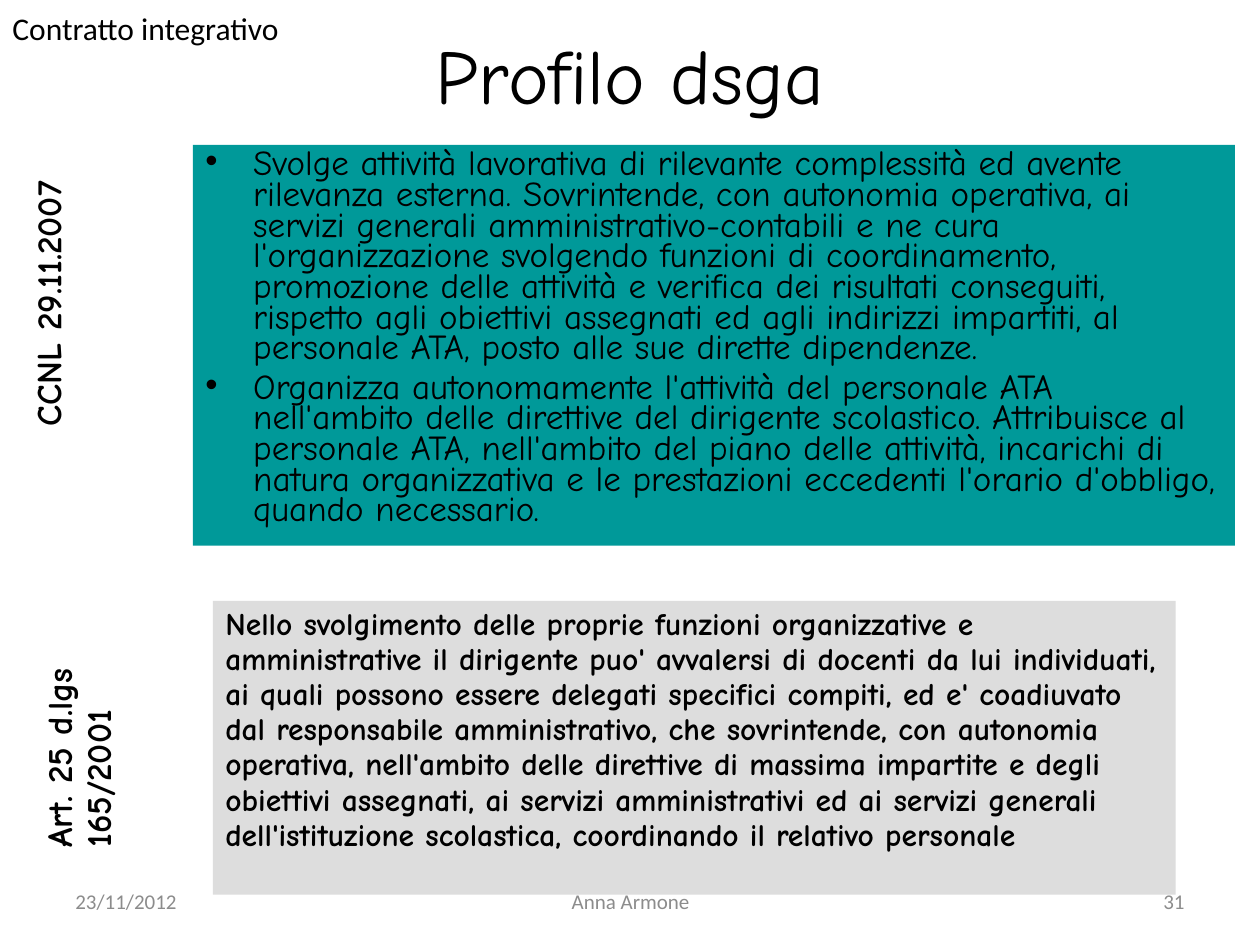
from dataclasses import dataclass, field

import pptx
import pptx.dml.color
import pptx.enum.shapes
import pptx.enum.text
import pptx.util

Inches = pptx.util.Inches
Pt = pptx.util.Pt
RGBColor = pptx.dml.color.RGBColor
ALIGN = pptx.enum.text.PP_ALIGN
ANCHOR = pptx.enum.text.MSO_ANCHOR

BLACK = RGBColor(0x00, 0x00, 0x00)
GREY = RGBColor(0x8C, 0x8C, 0x8C)
TEAL = RGBColor(0x00, 0x99, 0x99)
LIGHT = RGBColor(0xDD, 0xDD, 0xDD)

HAND = "Comic Neue"
SANS = "Calibri"

DUTIES = [
    "Svolge attività lavorativa di rilevante complessità ed avente rilevanza esterna. "
    "Sovrintende, con autonomia operativa, ai servizi generali amministrativo-contabili "
    "e ne cura l'organizzazione svolgendo funzioni di coordinamento, promozione delle "
    "attività e verifica dei risultati conseguiti, rispetto agli obiettivi assegnati ed "
    "agli indirizzi impartiti, al personale ATA, posto alle sue dirette dipendenze.",
    "Organizza autonomamente l'attività del personale ATA nell'ambito delle direttive "
    "del dirigente scolastico. Attribuisce al personale ATA, nell'ambito del piano delle "
    "attività, incarichi di natura organizzativa e le prestazioni eccedenti l'orario "
    "d'obbligo, quando necessario.",
]
LAW = (
    "Nello svolgimento delle proprie funzioni organizzative e amministrative il dirigente "
    "puo' avvalersi di docenti da lui individuati, ai quali possono essere delegati "
    "specifici compiti, ed e' coadiuvato dal responsabile amministrativo, che sovrintende, "
    "con autonomia operativa, nell'ambito delle direttive di massima impartite e degli "
    "obiettivi assegnati, ai servizi amministrativi ed ai servizi generali dell'istituzione "
    "scolastica, coordinando il relativo personale"
)


@dataclass
class Label:
    text: str
    box: tuple[float, float, float, float]
    font: dict
    para: dict = field(default_factory=dict)
    anchor: ANCHOR = ANCHOR.TOP
    rotation: float = 0


def set_all(target, values: dict) -> None:
    for name, value in values.items():
        setattr(target, name, value)


def place(sp, box: tuple[float, float, float, float]) -> None:
    names = ("left", "top", "width", "height")
    set_all(sp, dict(zip(names, map(Inches, box))))


def write(sp, texts: list[str], font: dict, para: dict, anchor: ANCHOR) -> None:
    tf = sp.text_frame
    set_all(tf, {"word_wrap": True, "vertical_anchor": anchor,
                 "auto_size": pptx.enum.text.MSO_AUTO_SIZE.NONE})
    for i, text in enumerate(texts):
        p = tf.paragraphs[0] if i == 0 else tf.add_paragraph()
        set_all(p, para)
        r = p.add_run()
        r.text = text
        values = dict(font)
        r.font.color.rgb = values.pop("color")
        set_all(r.font, values)


def fill(sp, color: RGBColor) -> None:
    sp.fill.solid()
    sp.fill.fore_color.rgb = color
    sp.line.fill.background()


def add_label(s, label: Label) -> None:
    sp = s.shapes.add_textbox(*map(Inches, label.box))
    sp.rotation = label.rotation
    write(sp, [label.text], label.font, label.para, label.anchor)


def main() -> None:
    prs = pptx.Presentation()
    prs.slide_width, prs.slide_height = Inches(10), Inches(7.5)
    s = prs.slides.add_slide(prs.slide_layouts[1])

    # Title
    title = s.shapes.title
    place(title, (0.5, 0.14, 9, 1.57))
    write(title, ["Profilo dsga"], {"name": HAND, "size": Pt(44), "color": BLACK},
          {"alignment": ALIGN.CENTER}, ANCHOR.TOP)
    title.text_frame.margin_top = Inches(0.08)

    # Duties set by the contract
    body = s.placeholders[1]
    place(body, (1.53, 1.15, 8.27, 3.18))
    fill(body, TEAL)
    write(body, DUTIES, {"name": HAND, "size": Pt(20), "color": BLACK},
          {"line_spacing": 0.73, "space_before": Pt(5)}, ANCHOR.TOP)
    for p in body.text_frame.paragraphs:
        pPr = p._p.get_or_add_pPr()
        pPr.set("marL", str(Inches(0.38)))
        pPr.set("indent", str(-Inches(0.38)))

    # Text of the law
    law = s.shapes.add_shape(pptx.enum.shapes.MSO_SHAPE.RECTANGLE,
                             *map(Inches, (1.69, 4.77, 7.64, 2.33)))
    law.shadow.inherit = False
    fill(law, LIGHT)
    write(law, [LAW], {"name": HAND, "size": Pt(18), "bold": True, "color": BLACK},
          {"alignment": ALIGN.LEFT, "line_spacing": 0.93, "space_before": Pt(11.2)},
          ANCHOR.TOP)

    # Vertical source labels, footer and corner heading
    side = {"name": HAND, "size": Pt(20), "bold": True, "color": BLACK}
    side_para = {"line_spacing": 0.93, "space_before": Pt(12.5)}
    small = {"name": SANS, "size": Pt(12), "color": GREY}
    labels = [
        Label("CCNL 29.11.2007", (-0.53, 2.04, 2.16, 0.72), side, side_para, rotation=270),
        Label("Art. 25 d.lgs 165/2001", (-0.43, 5.4, 2.13, 0.72), side, side_para,
              rotation=270),
        Label("23/11/2012", (0.5, 6.95, 2.33, 0.4), small, anchor=ANCHOR.MIDDLE),
        Label("31", (7.17, 6.95, 2.33, 0.4), small, {"alignment": ALIGN.RIGHT},
              ANCHOR.MIDDLE),
        Label("Anna Armone", (3.42, 6.95, 3.17, 0.4), small,
              {"alignment": ALIGN.CENTER}, ANCHOR.MIDDLE),
        Label("Contratto integrativo", (0, 0.02, 3.19, 0.4),
              {"name": SANS, "size": Pt(18), "color": BLACK}),
    ]
    for label in labels:
        add_label(s, label)

    prs.save("out.pptx")


if __name__ == "__main__":
    main()
